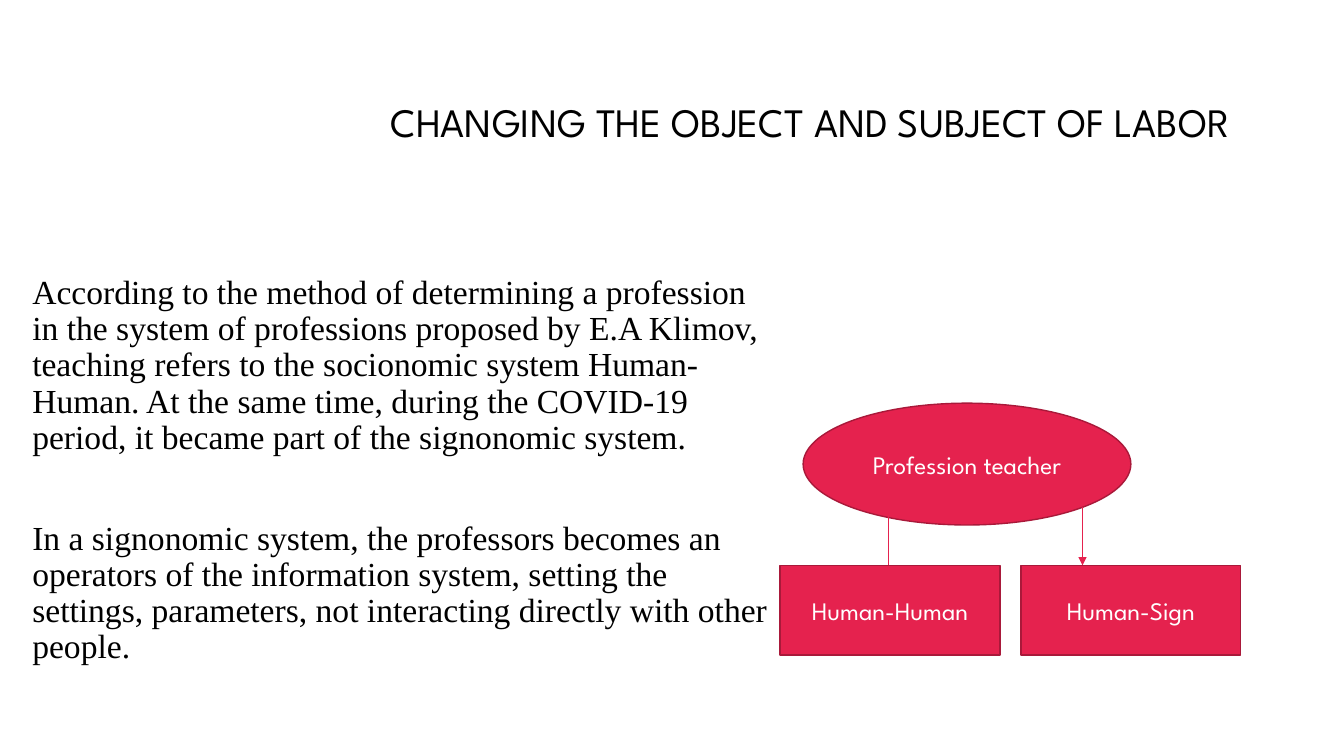
import pptx
import pptx.util
import pptx.dml.color
import pptx.enum.shapes
import pptx.enum.text
from lxml import etree

Cm, Pt = pptx.util.Cm, pptx.util.Pt
SHAPE = pptx.enum.shapes.MSO_SHAPE
ALIGN = pptx.enum.text.PP_ALIGN
ANCHOR = pptx.enum.text.MSO_ANCHOR
NS = "{http://schemas.openxmlformats.org/drawingml/2006/main}"

INK = {"text": "000000", "fill": "E5224E", "edge": "A9193A", "light": "FFFFFF"}
SANS, SERIF = "League Spartan", "Times New Roman"

TITLE = "CHANGING THE OBJECT AND SUBJECT OF LABOR"
BODY = [
    "According to the method of determining a profession in the system of "
    "professions proposed by E.A Klimov, teaching refers to the socionomic "
    "system Human-Human. At the same time, during the COVID-19 period, it "
    "became part of the signonomic system.",
    "In a signonomic system, the professors becomes an operators of the "
    "information system, setting the settings, parameters, not interacting "
    "directly with other people.",
]


def color(name):
    return pptx.dml.color.RGBColor.from_string(INK[name])


def style(para, face, size, ink):
    para.font.name = face
    para.font.size = Pt(size)
    para.font.color.rgb = color(ink)


def place(shape, left, top, width, height):
    shape.left, shape.top = Cm(left), Cm(top)
    shape.width, shape.height = Cm(width), Cm(height)
    shape.text_frame.auto_size = pptx.enum.text.MSO_AUTO_SIZE.NONE
    shape.text_frame.word_wrap = True


def add_title(slide, *box):
    title = slide.shapes.title
    place(title, *box)
    title.text_frame.vertical_anchor = ANCHOR.BOTTOM
    title.text_frame.text = TITLE
    para = title.text_frame.paragraphs[0]
    para.alignment = ALIGN.CENTER
    para.line_spacing = 0.9
    style(para, SANS, 28.8, "text")


def add_body(slide, *box):
    body = slide.placeholders[1]
    place(body, *box)
    frame = body.text_frame
    frame.vertical_anchor = ANCHOR.TOP
    frame.text = "\n".join(BODY)
    for i, para in enumerate(frame.paragraphs):
        props = para._p.get_or_add_pPr()
        props.set("marL", "0")
        props.set("indent", "0")
        etree.SubElement(props, NS + "buNone")
        para.alignment = ALIGN.LEFT
        para.line_spacing = 0.9
        para.space_before = Pt(46 if i else 0)
        style(para, SERIF, 24, "text")


def add_node(slide, kind, text, left, top, width, height):
    node = slide.shapes.add_shape(kind, Cm(left), Cm(top), Cm(width), Cm(height))
    node.shadow.inherit = False
    node.fill.solid()
    node.fill.fore_color.rgb = color("fill")
    node.line.color.rgb = color("edge")
    node.line.width = Pt(1)
    frame = node.text_frame
    frame.word_wrap = True
    frame.vertical_anchor = ANCHOR.MIDDLE
    frame.text = text
    para = frame.paragraphs[0]
    para.alignment = ALIGN.CENTER
    style(para, SANS, 18, "light")


def add_arrow(slide, x, top, end):
    arrow = slide.shapes.add_connector(
        pptx.enum.shapes.MSO_CONNECTOR.STRAIGHT, Cm(x), Cm(top), Cm(x), Cm(end))
    arrow.line.color.rgb = color("fill")
    arrow.line.width = Pt(0.75)
    etree.SubElement(arrow.line._get_or_add_ln(), NS + "tailEnd", type="triangle")
    etree.SubElement(arrow._element.spPr, NS + "effectLst")


def add_tree(slide, left, top, width, height):
    """Draw the profession oval with an arrow down to each of its systems."""
    gap, deep = 0.53, 2.26
    wide = (width - gap) / 2
    row = top + height - deep
    add_node(slide, SHAPE.OVAL, "Profession teacher", left + 0.58, top, 8.26, 3.07)
    # The first arrow runs on behind its box, which covers the head.
    leaves = [("Human-Human", 2.74, 2.79, 0.2), ("Human-Sign", 7.62, 2.62, 0)]
    for i, (text, x, start, over) in enumerate(leaves):
        add_arrow(slide, left + x, top + start, row + over)
        add_node(slide, SHAPE.RECTANGLE, text,
                 left + i * (wide + gap), row, wide, deep)


def main():
    deck = pptx.Presentation()
    deck.slide_width, deck.slide_height = Cm(33.87), Cm(19.05)
    slide = deck.slides.add_slide(deck.slide_layouts[1])
    add_title(slide, 6.96, 1.12, 26.92, 2.69)
    add_body(slide, 0.56, 6.81, 19.1, 8.59)
    add_tree(slide, 19.66, 10.16, 11.61, 6.35)
    deck.save("out.pptx")


if __name__ == "__main__":
    main()
